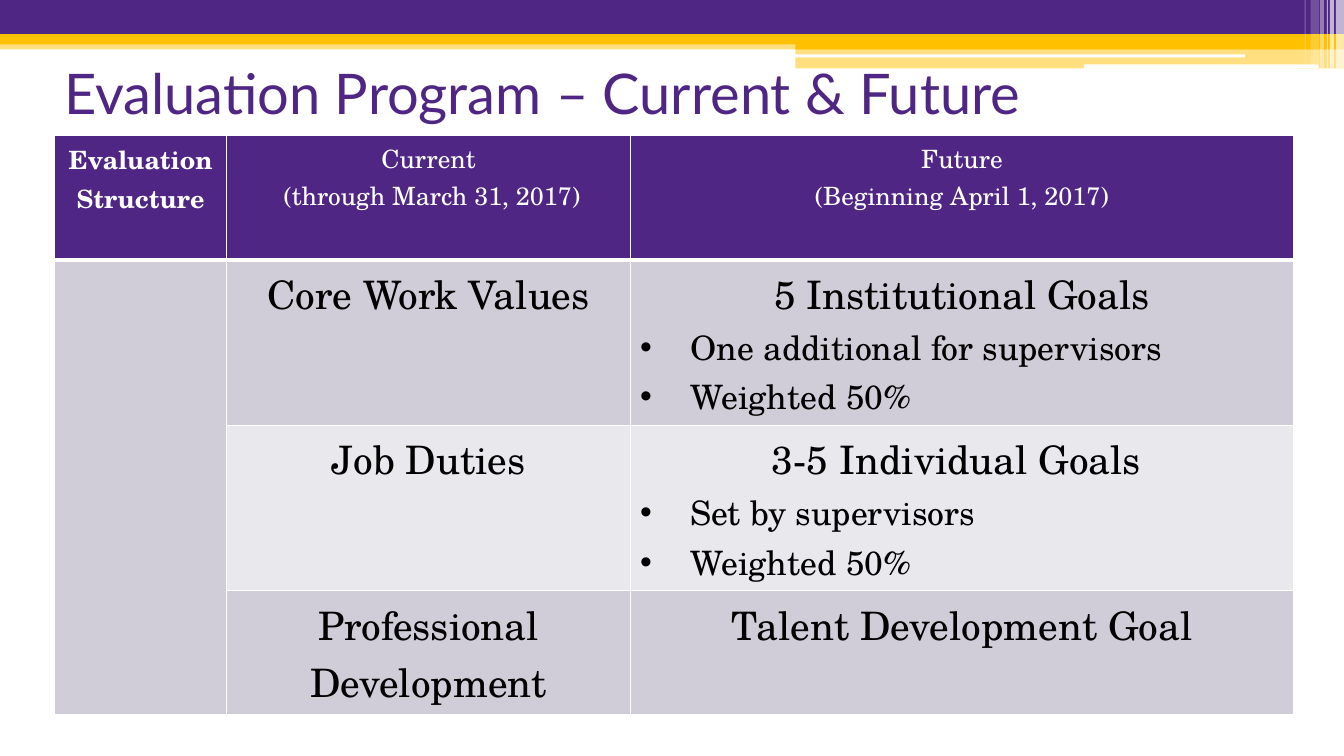
from lxml.etree import SubElement as Sub
from pptx import Presentation
from pptx.dml.color import RGBColor
from pptx.enum.shapes import MSO_SHAPE as Shape
from pptx.enum.text import MSO_ANCHOR as Anchor, PP_ALIGN as Align
from pptx.oxml.ns import qn
from pptx.util import Inches, Pt

COLORS = {"purple": "4F2683", "gold": "FFC000", "white": "FFFFFF",
          "black": "000000", "dark": "D0CDD9", "light": "E9E8ED"}
SERIF = "TeX Gyre Schola"
TITLE = "Evaluation Program – Current & Future"

# left, top, width, height, color, opacity in percent
BANDS = [
    (0, 0.4, 13.33, 0.09, "gold", 50),
    (0, 0, 13.33, 0.34, "purple", 100),
    (0, 0.34, 13.33, 0.1, "gold", 100),
    (7.89, 0.39, 5.44, 0.1, "gold", 100),
    (7.89, 0.48, 5.44, 0.2, "gold", 50),
]
SLITS = [(7.88, 0.54, 4.47, 0.03), (10.75, 0.64, 2.33, 0.04)]
# left, width, height, opacity in percent
STRIPES = [(13.25, 0.08, 0.68, 65), (13.19, 0.04, 0.68, 65),
           (13.16, 0.01, 0.68, 60), (13.09, 0.04, 0.68, 40),
           (13, 0.08, 0.64, 20), (12.94, 0.01, 0.64, 30)]

COLS = [1.71, 4, 6.58]
ROWS = [1.24, 1.64, 1.64, 1.23]
HEAD = [["Evaluation Structure"],
        ["Current", " (through March 31, 2017)"],
        ["Future", "(Beginning April 1, 2017)"]]
# current part, future part, bullets of the future part
BODY = [
    ("Core Work Values", "5 Institutional Goals",
     ["One additional for supervisors", "Weighted 50%"]),
    ("Job Duties", "3-5 Individual Goals ",
     ["Set by supervisors", "Weighted 50%"]),
    ("Professional Development", "Talent Development Goal", []),
]


def rgb(name):
    return RGBColor.from_string(COLORS[name])


def write(frame, text, size=18, font=SERIF, color="black", bold=False,
          align=Align.CENTER, bullet=False):
    """Fill the first empty paragraph, or add one after the text."""
    last = frame.paragraphs[-1]
    para = frame.add_paragraph() if last.runs else last
    para.alignment = align
    run = para.add_run()
    run.text = text
    run.font.size, run.font.name, run.font.bold = Pt(size), font, bold
    run.font.color.rgb = rgb(color)
    if bullet:
        props = para._p.get_or_add_pPr()
        props.set("marL", str(Inches(0.5)))
        props.set("indent", str(Inches(-0.5)))
        Sub(props, qn("a:buFont"), typeface="Arial")
        Sub(props, qn("a:buChar"), char="•")


def bar(slide, box, color, alpha=100, kind=Shape.RECTANGLE):
    shape = slide.shapes.add_shape(kind, *map(Inches, box))
    shape.shadow.inherit = False
    shape.fill.solid()
    shape.fill.fore_color.rgb = rgb(color)
    shape.line.fill.background()
    if alpha < 100:
        tint = shape._element.spPr.find(qn("a:solidFill"))[0]
        Sub(tint, qn("a:alpha"), val=str(alpha * 1000))


def paint(cell, color, base=1):
    """Set white borders, the bottom one base points wide, then the fill."""
    props = cell._tc.get_or_add_tcPr()
    for side, width in zip("LRTB", (1, 1, 1, base)):
        line = Sub(props, qn("a:ln" + side), w=str(Pt(width)))
        fill = Sub(line, qn("a:solidFill"))
        Sub(fill, qn("a:srgbClr"), val=COLORS["white"])
    cell.fill.solid()
    cell.fill.fore_color.rgb = rgb(color)


def add_bands(slide):
    for *box, color, alpha in BANDS:
        bar(slide, box, color, alpha)
    for box in SLITS:
        bar(slide, box, "white", kind=Shape.ROUNDED_RECTANGLE)
    for left, width, height, alpha in STRIPES:
        bar(slide, (left, 0, width, height), "white", alpha)


def add_title(slide):
    box = slide.shapes.add_textbox(*map(Inches, (0.54, 0.33, 12, 1.17)))
    frame = box.text_frame
    frame.word_wrap = True
    frame.vertical_anchor = Anchor.MIDDLE
    write(frame, TITLE, size=40, font="Lato", color="purple", align=Align.LEFT)


def add_goals(slide):
    box = map(Inches, (0.54, 1.34, sum(COLS), sum(ROWS)))
    table = slide.shapes.add_table(len(ROWS), len(COLS), *box).table
    table.first_row = table.horz_banding = False
    for col, width in zip(table.columns, COLS):
        col.width = Inches(width)
    for row, height in zip(table.rows, ROWS):
        row.height = Inches(height)

    for c, lines in enumerate(HEAD):
        cell = table.cell(0, c)
        paint(cell, "purple", base=3)
        for text in lines:
            write(cell.text_frame, text, color="white", bold=c == 0)

    for r, (now, goal, points) in enumerate(BODY, 1):
        side, left, right = (table.cell(r, c) for c in range(len(COLS)))
        shade = "dark" if r % 2 else "light"
        paint(side, "dark")
        paint(left, shade)
        paint(right, shade)
        write(left.text_frame, now, size=28)
        write(right.text_frame, goal, size=28)
        for point in points:
            write(right.text_frame, point, size=24, align=Align.LEFT,
                  bullet=True)
    table.cell(1, 0).merge(table.cell(len(BODY), 0))


def main():
    deck = Presentation()
    deck.slide_width, deck.slide_height = Inches(13.33), Inches(7.5)
    slide = deck.slides.add_slide(deck.slide_layouts[6])
    add_bands(slide)
    add_title(slide)
    add_goals(slide)
    deck.save("out.pptx")


if __name__ == "__main__":
    main()
